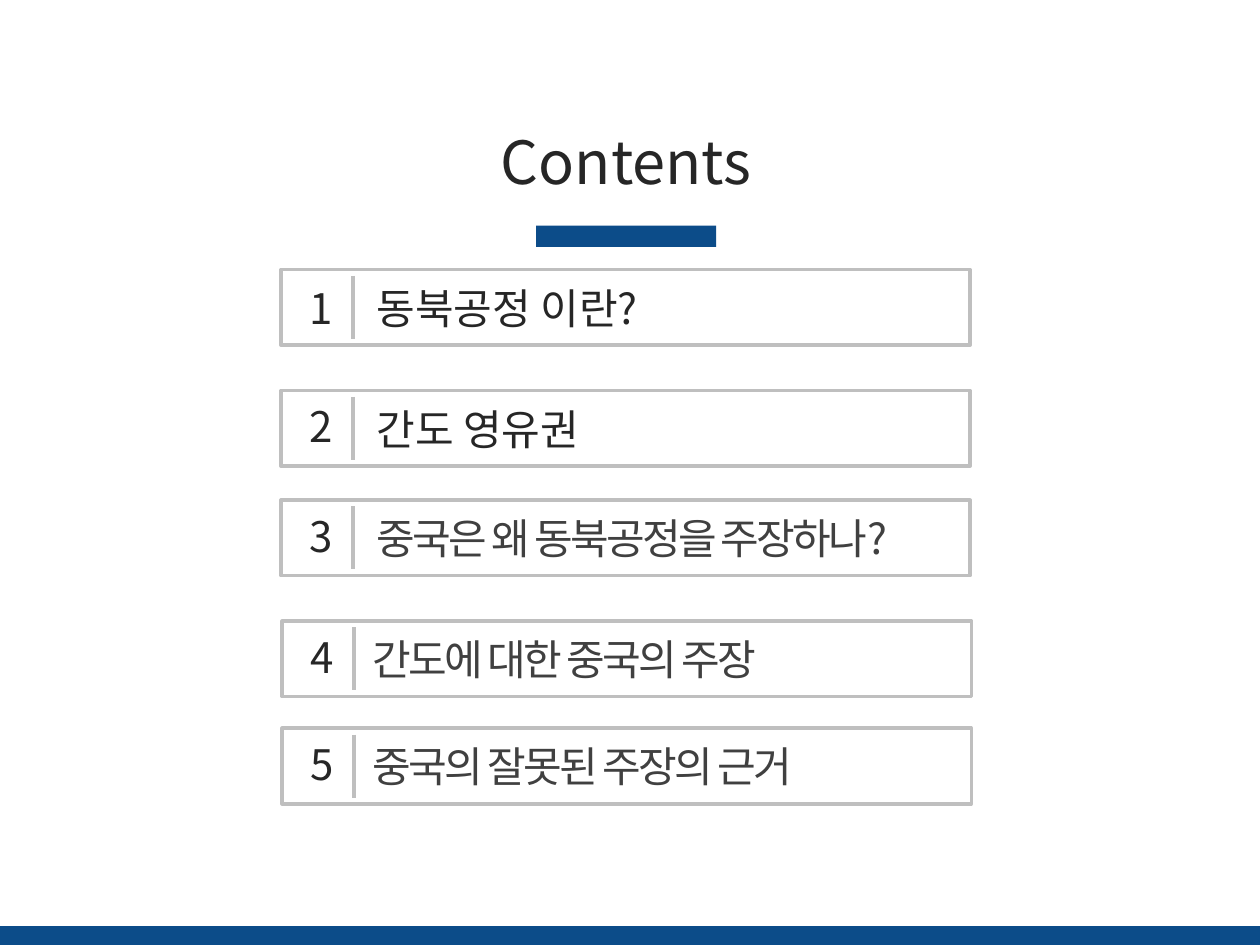
from pptx import Presentation
from pptx.dml.color import RGBColor
from pptx.enum.shapes import MSO_CONNECTOR as Connector, MSO_SHAPE as Shape
from pptx.enum.text import MSO_ANCHOR as Anchor, PP_ALIGN as Align
from pptx.oxml.ns import qn
from pptx.util import Inches, Pt
from lxml.etree import SubElement

FONT = "Noto Sans CJK KR"
BLUE, GRAY, DARK, SOFT = "0C4C89", "BFBFBF", "262626", "404040"
ROW_WIDTH, ROW_HEIGHT = 5.47, 0.6
ROWS = [
    {"left": 2.23, "top": 2.14, "number_top": 0.05, "label": "동북공정 이란?"},
    {"left": 2.23, "top": 3.1, "label": "간도 영유권"},
    {"left": 2.23, "top": 3.97, "label": "중국은 왜 동북공정을 주장하나?",
     "color": SOFT, "spacing": -1.5},
    {"left": 2.24, "top": 4.93, "label": "간도에 대한 중국의 주장",
     "label_left": 0.62, "color": SOFT, "spacing": -1.5},
    {"left": 2.24, "top": 5.78, "label": "중국의 잘못된 주장의 근거",
     "label_left": 0.62, "color": SOFT, "spacing": -1.5},
]


def rgb(value):
    """Return the colour for a hex string."""
    return RGBColor.from_string(value)


def lengths(*values):
    """Turn numbers into inches."""
    return [Inches(value) for value in values]


def write(box, text, size=24, color=DARK, align=Align.LEFT, wrap=True, spacing=0):
    """Put one formatted line of text into a shape."""
    frame = box.text_frame
    frame.word_wrap = wrap
    frame.vertical_anchor = Anchor.MIDDLE
    frame.margin_top = frame.margin_bottom = 0
    para = frame.paragraphs[0]
    para.alignment = align
    span = para.add_run()
    span.text = text
    span.font.size = Pt(size)
    span.font.name = FONT
    span.font.color.rgb = rgb(color)
    properties = span.font._element
    SubElement(properties, qn("a:ea"), typeface=FONT)
    if spacing:
        properties.set("spc", str(round(spacing * 100)))


def add_rectangle(shapes, left, top, width, height, fill=None, line=None):
    """Add a plain rectangle with an optional fill and outline."""
    box = shapes.add_shape(Shape.RECTANGLE, *lengths(left, top, width, height))
    box.shadow.inherit = False
    if fill:
        box.fill.solid()
        box.fill.fore_color.rgb = rgb(fill)
    else:
        box.fill.background()
    if line:
        box.line.color.rgb = rgb(line)
        box.line.width = Pt(2)
    else:
        box.line.fill.background()
    return box


def add_divider(shapes, x, top, bottom):
    """Add the vertical line between number and label."""
    divider = shapes.add_connector(Connector.STRAIGHT, *lengths(x, top, x, bottom))
    divider.line.color.rgb = rgb(GRAY)
    divider.line.width = Pt(2)
    SubElement(divider._element.spPr, qn("a:effectLst"))


def add_heading(page, left, top, width, height):
    """Place the title and the bar centred under it."""
    title = page.shapes.title
    title.left, title.top, title.width, title.height = lengths(left, top, width, height)
    write(title, "Contents", size=34, align=Align.CENTER)
    bar_width = 1.43
    add_rectangle(page.shapes, left + (width - bar_width) / 2, top + 0.85,
                  bar_width, 0.17, fill=BLUE)


def add_row(page, number, left, top, label, number_top=0.03, label_left=0.66,
            color=DARK, spacing=0):
    """Place one numbered entry as a group."""
    shapes = page.shapes.add_group_shape().shapes
    add_rectangle(shapes, left, top, ROW_WIDTH, ROW_HEIGHT, line=GRAY)
    add_divider(shapes, left + 0.57, top + 0.05, top + 0.55)
    number_box = shapes.add_textbox(*lengths(left + 0.13, top + number_top, 0.3, 0.5))
    write(number_box, str(number), align=Align.CENTER)
    label_box = shapes.add_textbox(*lengths(left + label_left, top + 0.05, 4.59, 0.5))
    write(label_box, label, color=color, spacing=spacing)


def main():
    """Build and save the contents slide."""
    deck = Presentation()
    deck.slide_width, deck.slide_height = lengths(10, 7.5)
    page = deck.slides.add_slide(deck.slide_layouts[5])
    add_heading(page, 3.23, 0.94, 3.48, 0.67)
    for number, row in enumerate(ROWS, 1):
        add_row(page, number, **row)
    add_rectangle(page.shapes, 0, 7.35, 10, 0.15, fill=BLUE)
    deck.save("out.pptx")


if __name__ == "__main__":
    main()
